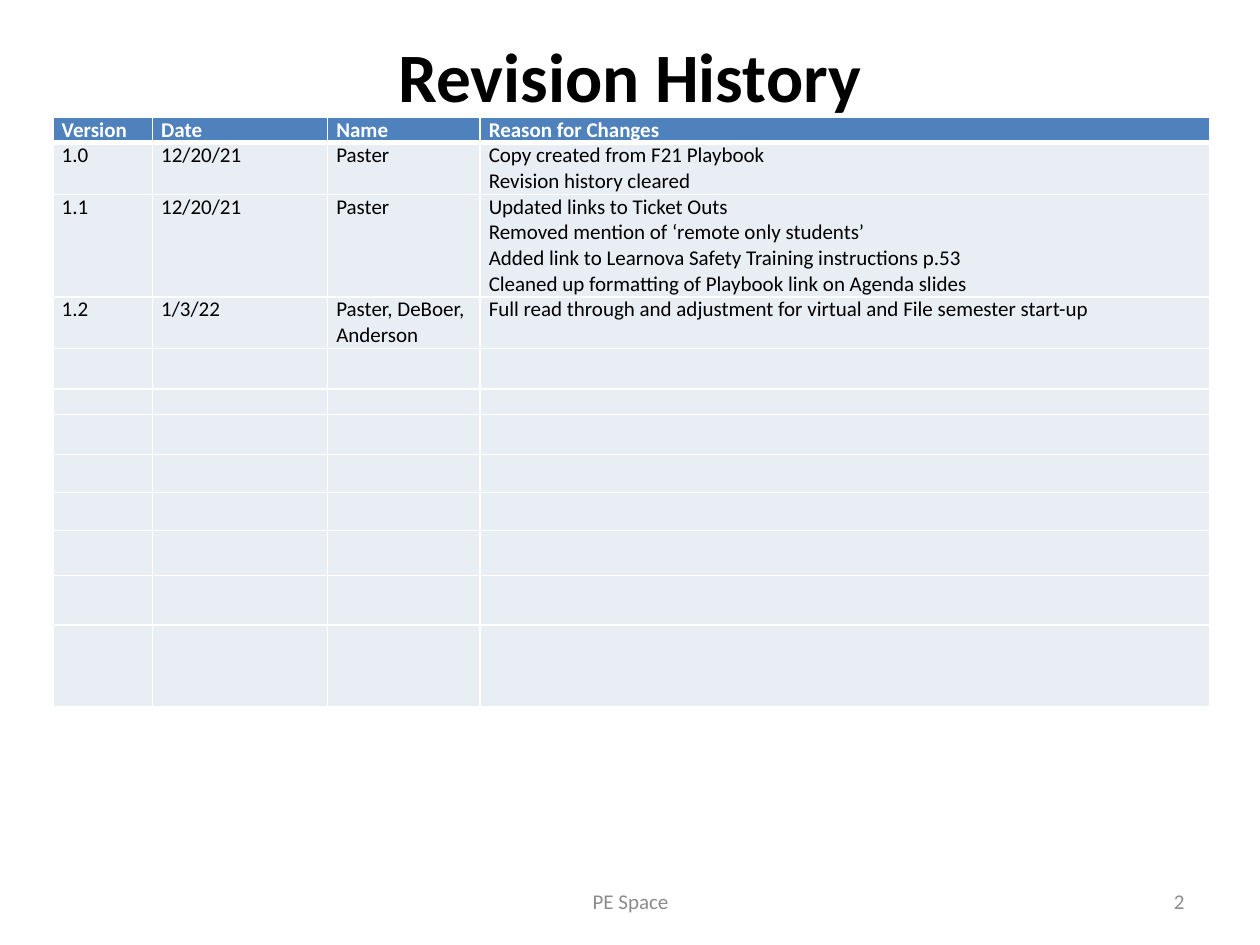
import pptx
import pptx.dml.color
import pptx.enum.text
import pptx.oxml.ns
import pptx.util
from lxml import etree

Inches = pptx.util.Inches
Pt = pptx.util.Pt
Align = pptx.enum.text.PP_ALIGN
Anchor = pptx.enum.text.MSO_ANCHOR
RGBColor = pptx.dml.color.RGBColor
qn = pptx.oxml.ns.qn

BLACK = RGBColor(0x00, 0x00, 0x00)
WHITE = RGBColor(0xFF, 0xFF, 0xFF)
BLUE = RGBColor(0x4F, 0x81, 0xBD)
PALE = RGBColor(0xE9, 0xED, 0xF4)
GRAY = RGBColor(0x8C, 0x8C, 0x8C)

COLUMN_WIDTHS = [0.79, 1.39, 1.21, 5.79]
ROW_HEIGHTS = [0.2, 0.41, 0.81, 0.41, 0.32, 0.2, 0.32, 0.3, 0.3, 0.36, 0.39, 0.65]
REVISIONS = [
    ["Version", "Date", "Name", "Reason for Changes"],
    ["1.0", "12/20/21", "Paster",
     "Copy created from F21 Playbook\nRevision history cleared"],
    ["1.1", "12/20/21", "Paster",
     "Updated links to Ticket Outs\n"
     "Removed mention of ‘remote only students’\n"
     "Added link to Learnova Safety Training instructions p.53\n"
     "Cleaned up formatting of Playbook link on Agenda slides"],
    ["1.2", "1/3/22", "Paster, DeBoer, Anderson",
     "Full read through and adjustment for virtual and File semester start-up"],
]


def style_paragraph(para, size, color, bold=False, align=None):
    """Set the font and alignment of one paragraph."""
    para.font.name = "Calibri"
    para.font.size = Pt(size)
    para.font.bold = bold
    para.font.color.rgb = color
    para.alignment = align


def add_title(page, text):
    """Fill and place the title placeholder."""
    title = page.shapes.title
    title.left, title.top = Inches(0.5), Inches(0.3)
    title.width, title.height = Inches(9), Inches(1.25)
    frame = title.text_frame
    frame.text = text
    frame.auto_size = pptx.enum.text.MSO_AUTO_SIZE.NONE
    frame.vertical_anchor = Anchor.MIDDLE
    style_paragraph(frame.paragraphs[0], 39.6, BLACK, True, Align.CENTER)


def add_border(cell, side, width):
    """Draw a white line along one side of a cell."""
    line = etree.SubElement(cell._tc.get_or_add_tcPr(), qn(f"a:ln{side}"), w=str(Pt(width)))
    fill = etree.SubElement(line, qn("a:solidFill"))
    etree.SubElement(fill, qn("a:srgbClr"), val=str(WHITE))


def format_cell(cell, text, is_header, below_header):
    """Write a cell and set its margins, borders, fill and font."""
    cell.margin_left = cell.margin_right = Inches(0.07)
    cell.margin_top = cell.margin_bottom = 0
    widths = {"L": 1, "R": 1, "T": 3 if below_header else 1, "B": 3 if is_header else 1}
    for side, width in widths.items():
        add_border(cell, side, width)
    cell.fill.solid()
    cell.fill.fore_color.rgb = BLUE if is_header else PALE
    cell.text = text
    for para in cell.text_frame.paragraphs:
        style_paragraph(para, 12, WHITE if is_header else BLACK, is_header)
        if not text:
            para._p.get_or_add_endParaRPr().set("sz", "1200")


def add_revision_table(page):
    """Add the revision table, with empty rows after the last entry."""
    table = page.shapes.add_table(
        len(ROW_HEIGHTS), len(COLUMN_WIDTHS), Inches(0.42), Inches(0.93),
        Inches(sum(COLUMN_WIDTHS)), Inches(sum(ROW_HEIGHTS))).table
    for column, width in zip(table.columns, COLUMN_WIDTHS):
        column.width = Inches(width)
    for index, height in enumerate(ROW_HEIGHTS):
        row = table.rows[index]
        row.height = Inches(height)
        texts = REVISIONS[index] if index < len(REVISIONS) else [""] * len(COLUMN_WIDTHS)
        for cell, text in zip(row.cells, texts):
            format_cell(cell, text, index == 0, index == 1)


def add_footer(page, text, left, width, align):
    """Add one gray text box at the foot of the slide."""
    box = page.shapes.add_textbox(Inches(left), Inches(6.95), Inches(width), Inches(0.4))
    frame = box.text_frame
    frame.word_wrap = True
    frame.vertical_anchor = Anchor.MIDDLE
    frame.text = text
    style_paragraph(frame.paragraphs[0], 12, GRAY, align=align)


def main():
    """Build the revision history slide."""
    deck = pptx.Presentation()
    deck.slide_width, deck.slide_height = Inches(10), Inches(7.5)
    page = deck.slides.add_slide(deck.slide_layouts[5])
    add_title(page, "Revision History\v")
    add_revision_table(page)
    add_footer(page, "PE Space", 3.42, 3.17, Align.CENTER)
    add_footer(page, "2", 7.17, 2.33, Align.RIGHT)
    deck.save("out.pptx")


if __name__ == "__main__":
    main()
